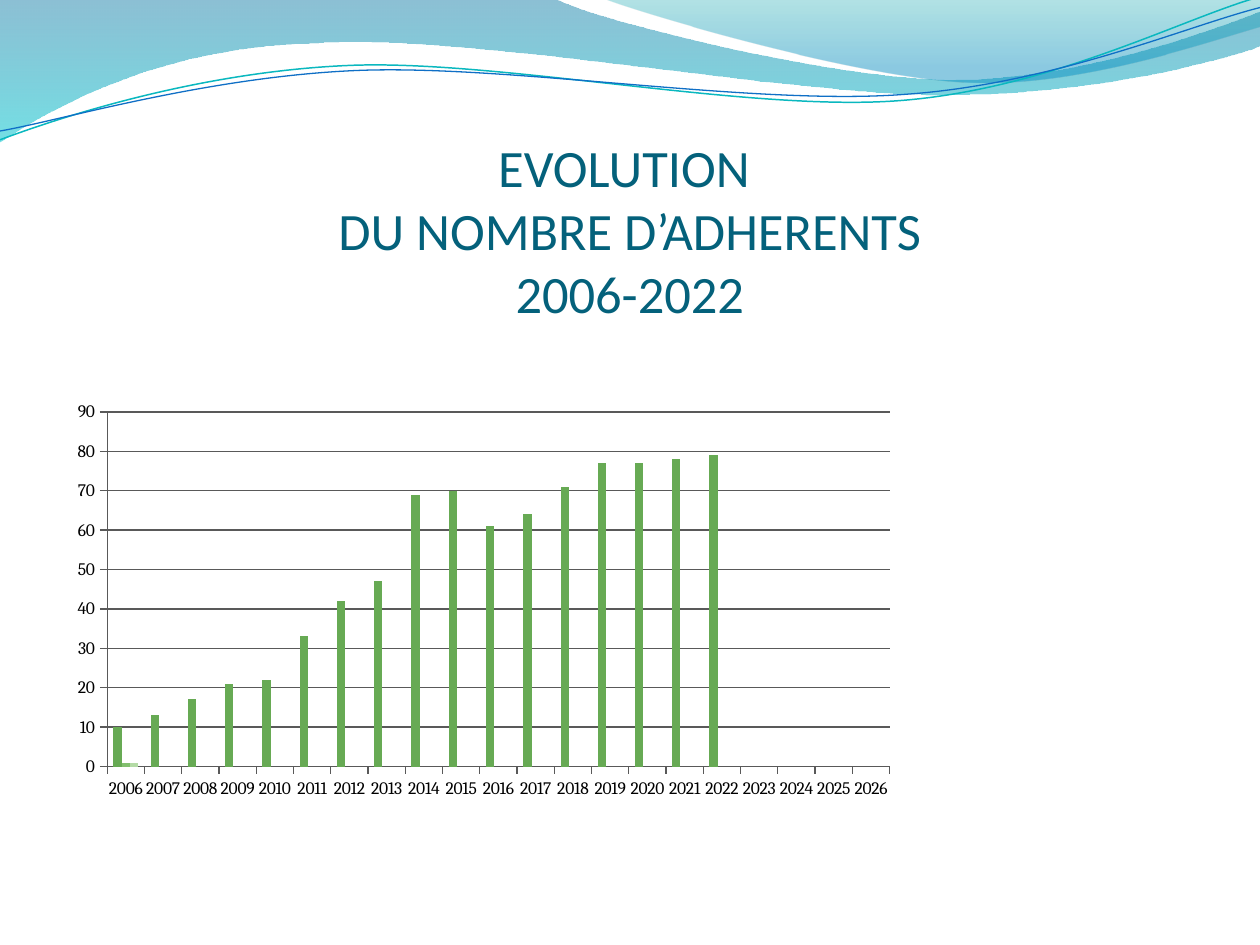
from lxml import etree
from pptx import Presentation
from pptx.chart.data import CategoryChartData
from pptx.dml.color import RGBColor
from pptx.enum.chart import XL_CHART_TYPE, XL_TICK_MARK
from pptx.enum.text import MSO_ANCHOR, MSO_AUTO_SIZE, PP_ALIGN
from pptx.oxml import parse_xml
from pptx.oxml.ns import nsdecls, qn
from pptx.util import Inches, Pt

COLUMNS = XL_CHART_TYPE.COLUMN_CLUSTERED
OUTSIDE = XL_TICK_MARK.OUTSIDE
CENTER = PP_ALIGN.CENTER
BOTTOM = MSO_ANCHOR.BOTTOM
NO_AUTOFIT = MSO_AUTO_SIZE.NONE

TITLE_BLUE = RGBColor(0x04, 0x61, 0x7B)
BLACK = RGBColor(0, 0, 0)
AXIS_GREY = RGBColor(0x59, 0x59, 0x59)
DEEP_BLUE = RGBColor(0x00, 0x74, 0xA1)
CYAN = RGBColor(0x00, 0xC6, 0xCF)
TEAL = RGBColor(0x00, 0xA1, 0xA9)
SKY_BLUE = RGBColor(0x00, 0x8B, 0xBF)
LINE_TEAL = RGBColor(0x0A, 0xB8, 0xBF)
LINE_BLUE = RGBColor(0x0F, 0x6F, 0xC6)
GREEN = RGBColor(0x67, 0xAA, 0x54)
MID_GREEN = RGBColor(0x82, 0xBF, 0x6E)
PALE_GREEN = RGBColor(0xB4, 0xDB, 0xA6)

TITLE_LINES = ["EVOLUTION ", "DU NOMBRE D’ADHERENTS", "2006-2022"]

YEARS = [str(year) for year in range(2006, 2027)]
MEMBERS = [10, 13, 17, 21, 22, 33, 42, 47, 69, 70, 61, 64, 71, 77, 77, 78, 79]
SERIES = [
    ("Series 1", MEMBERS, GREEN),
    ("Series 2", [1], MID_GREEN),
    ("Series 3", [1], PALE_GREEN),
]
PLOT_AREA = {"x": 0.039, "y": 0.055, "w": 0.69, "h": 0.675}

# Outlines in inches: two numbers are a straight step, six are a Bezier curve.
# Gradient stops: position, colour, opacity in percent.
BANDS = [
    ([(0, 0), (4.4, -0.01), (4.76, 0.17, 6.64, 0.63, 7.58, 0.63),
      (8.53, 0.63, 9.58, 0.26, 10, 0.09), (10.01, 0.36),
      (9.83, 0.44, 8.7, 0.76, 7.46, 0.75), (6.22, 0.75, 3.82, 0.28, 2.57, 0.34),
      (1.29, 0.36, 0.46, 0.83, -0.01, 1.13)],
     [(0, DEEP_BLUE, 45), (1, CYAN, 55)]),
    ([(4.79, -0.01), (5.09, 0.11, 6.82, 0.62, 7.69, 0.65),
      (8.56, 0.69, 9.61, 0.32, 10, 0.21), (10, 0)],
     [(0, TEAL, 30), (0.8, SKY_BLUE, 45)]),
]
WAVES = [
    ([(0, 1.11), (0.48, 0.93, 1.58, 0.57, 2.77, 0.52),
      (3.95, 0.47, 5.93, 0.89, 7.13, 0.8), (8.33, 0.71, 9.38, 0.15, 9.98, -0.02)],
     LINE_TEAL, 0.85),
    ([(0, 1.04), (0.47, 0.96, 1.64, 0.61, 2.83, 0.56),
      (4.03, 0.51, 5.97, 0.84, 7.17, 0.75), (8.36, 0.67, 9.41, 0.21, 10, 0.06)],
     LINE_BLUE, 0.75),
]


def add_outline(page, outline, close):
    """Build a freeform through the end points, then bend its curved steps."""
    steps = [[Inches(value) for value in step] for step in outline]
    knots = [step[-2:] for step in steps]
    builder = page.shapes.build_freeform(*knots[0])
    builder.add_line_segments(knots[1:], close=close)
    shape = builder.convert_to_shape()
    shape.shadow.inherit = False
    left, top = (min(values) for values in zip(*knots))
    segments = list(shape._element.iter(qn("a:lnTo")))
    for segment, step in zip(segments, steps[1:]):
        if len(step) == 2:
            continue
        curve = etree.Element(qn("a:cubicBezTo"))
        for x, y in (step[0:2], step[2:4], step[4:6]):
            etree.SubElement(curve, qn("a:pt"), x=str(x - left), y=str(y - top))
        segment.getparent().replace(segment, curve)
    return shape


def add_band(page, outline, stops):
    band = add_outline(page, outline, True)
    band.line.fill.background()
    band.fill.gradient()
    band.fill.gradient_angle = 270
    for stop, (position, color, _) in zip(band.fill.gradient_stops, stops):
        stop.position = position
        stop.color.rgb = color
    for tint, (_, _, opacity) in zip(band._element.spPr.iter(qn("a:srgbClr")), stops):
        etree.SubElement(tint, qn("a:alpha"), val=str(opacity * 1000))


def add_wave(page, outline, color, width):
    wave = add_outline(page, outline, False)
    wave.fill.background()
    wave.line.color.rgb = color
    wave.line.width = Pt(width)


def format_title(title):
    title.left, title.top = Inches(0.5), Inches(0.77)
    title.width, title.height = Inches(9), Inches(1.8)
    frame = title.text_frame
    frame.auto_size = NO_AUTOFIT
    frame.word_wrap = True
    frame.vertical_anchor = BOTTOM
    frame.margin_left = frame.margin_right = frame.margin_bottom = 0
    frame.margin_top = Inches(0.05)
    para = frame.paragraphs[0]
    para.alignment = CENTER
    for index, line in enumerate(TITLE_LINES):
        if index:
            para.add_line_break()
        span = para.add_run()
        span.text = line
        span.font.name = "Calibri"
        span.font.size = Pt(30)
        span.font.color.rgb = TITLE_BLUE


def place_plot(chart):
    """Fix the inner plot area as fractions of the chart frame."""
    plot_area = chart._chartSpace.chart.plotArea
    for old in plot_area.findall(qn("c:layout")):
        plot_area.remove(old)
    modes = '<c:layoutTarget val="inner"/><c:xMode val="edge"/><c:yMode val="edge"/>'
    sizes = "".join(f'<c:{key} val="{value}"/>' for key, value in PLOT_AREA.items())
    plot_area.insert(0, parse_xml(
        f'<c:layout {nsdecls("c")}><c:manualLayout>{modes}{sizes}'
        "</c:manualLayout></c:layout>"))


def add_member_chart(page):
    data = CategoryChartData()
    data.categories = YEARS
    for name, values, _ in SERIES:
        data.add_series(name, values + [None] * (len(YEARS) - len(values)))
    chart = page.shapes.add_chart(
        COLUMNS, Inches(0.5), Inches(3.04), Inches(9), Inches(4.17), data).chart
    chart.has_legend = False
    chart.has_title = False
    chart.font.name = "Cambria"
    chart.font.size = Pt(10)
    chart.font.color.rgb = BLACK
    plot = chart.plots[0]
    plot.gap_width = 150
    plot.overlap = 0
    plot.vary_by_categories = False
    for series, (_, _, color) in zip(plot.series, SERIES):
        series.format.fill.solid()
        series.format.fill.fore_color.rgb = color
    value_axis = chart.value_axis
    value_axis.minimum_scale, value_axis.maximum_scale = 0, 90
    value_axis.major_unit = 10
    value_axis.has_major_gridlines = True
    for axis in (chart.category_axis, value_axis):
        axis.major_tick_mark = OUTSIDE
    for part in (chart.category_axis, value_axis, value_axis.major_gridlines):
        part.format.line.color.rgb = AXIS_GREY
        part.format.line.width = Pt(0.75)
    place_plot(chart)


def main():
    deck = Presentation()
    deck.slide_width, deck.slide_height = Inches(10), Inches(7.5)
    page = deck.slides.add_slide(deck.slide_layouts[5])
    title = page.shapes.title
    for outline, stops in BANDS:
        add_band(page, outline, stops)
    for outline, color, width in WAVES:
        add_wave(page, outline, color, width)
    format_title(title)
    page.shapes._spTree.append(title._element)
    add_member_chart(page)
    deck.save("out.pptx")


if __name__ == "__main__":
    main()
